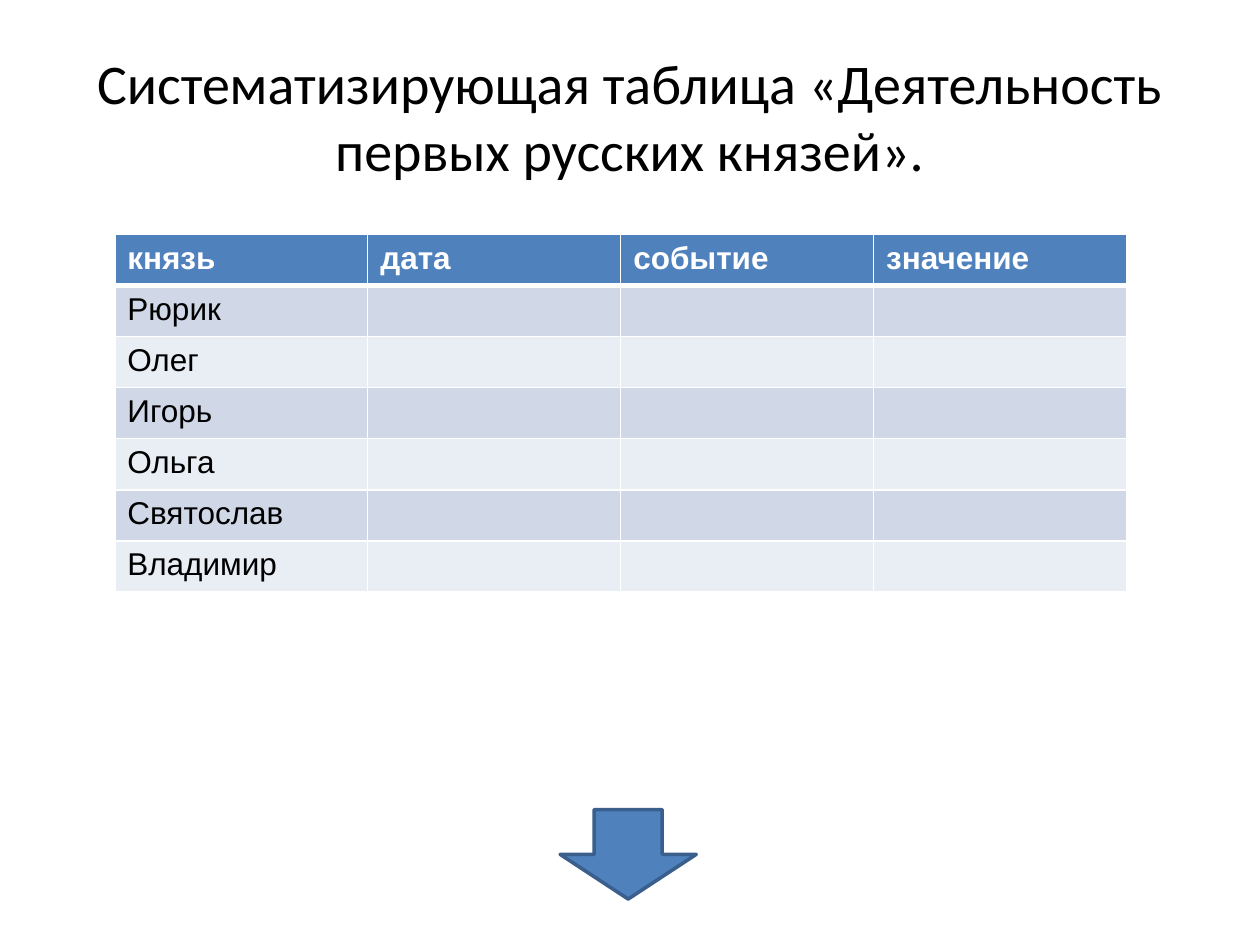
"""Build a slide with a table of the first Russian princes and a down arrow."""
from dataclasses import dataclass

from lxml.etree import SubElement
from pptx import Presentation
from pptx.dml.color import RGBColor as Color
from pptx.enum.shapes import MSO_SHAPE as Preset
from pptx.enum.text import MSO_ANCHOR as Anchor, PP_ALIGN as Align
from pptx.oxml.ns import qn
from pptx.util import Pt

TITLE = "Систематизирующая таблица «Деятельность первых русских князей»."
HEADINGS = ["князь", "дата", "событие", "значение"]
PRINCES = ["Рюрик", "Олег", "Игорь", "Ольга", "Святослав", "Владимир"]


@dataclass(frozen=True)
class Theme:
    title_font: str = "Calibri"
    table_font: str = "Arial"
    title_size: int = 32
    table_size: int = 18
    text: str = "000000"
    white: str = "FFFFFF"
    accent: str = "4F81BD"
    outline: str = "3A5F8C"
    bands: tuple = ("D0D8E8", "E9EDF4")


THEME = Theme()


def place(shape, left, top, width, height):
    shape.left, shape.top = Pt(left), Pt(top)
    shape.width, shape.height = Pt(width), Pt(height)


def add_text(para, text, font, size, color, bold=False):
    span = para.add_run()
    span.text = text
    span.font.name, span.font.size, span.font.bold = font, Pt(size), bold
    span.font.color.rgb = Color.from_string(color)


def set_borders(cell, top, bottom):
    properties = cell._tc.get_or_add_tcPr()
    for side, width in (("L", 1), ("R", 1), ("T", top), ("B", bottom)):
        line = SubElement(properties, qn(f"a:ln{side}"), w=str(Pt(width)))
        fill = SubElement(line, qn("a:solidFill"))
        SubElement(fill, qn("a:srgbClr"), val=THEME.white)


def add_title(page):
    title = page.shapes.title
    place(title, 36, 21.6, 648, 89.3)
    frame = title.text_frame
    frame.word_wrap = True
    frame.vertical_anchor = Anchor.MIDDLE
    para = frame.paragraphs[0]
    para.alignment = Align.CENTER
    add_text(para, TITLE, THEME.title_font, THEME.title_size, THEME.text)


def add_princes_table(page):
    rows = [HEADINGS] + [[name, "", "", ""] for name in PRINCES]
    row_height, column_width = 29.2, 144.54
    table = page.shapes.add_table(
        len(rows), len(HEADINGS), Pt(65.6), Pt(133.9),
        Pt(column_width * len(HEADINGS)), Pt(row_height * len(rows))).table
    for column in table.columns:
        column.width = Pt(column_width)
    for number, texts in enumerate(rows):
        table.rows[number].height = Pt(row_height)
        header = number == 0
        fill = THEME.accent if header else THEME.bands[(number - 1) % 2]
        color = THEME.white if header else THEME.text
        for cell, text in zip(table.rows[number].cells, texts):
            set_borders(cell, 3 if number == 1 else 1, 3 if header else 1)
            cell.fill.solid()
            cell.fill.fore_color.rgb = Color.from_string(fill)
            para = cell.text_frame.paragraphs[0]
            para.font.size = Pt(THEME.table_size)
            if text:
                add_text(para, text, THEME.table_font, THEME.table_size, color, header)


def add_arrow(page):
    arrow = page.shapes.add_shape(Preset.LEFT_ARROW, Pt(333.4), Pt(449.3), Pt(51.1), Pt(77.8))
    arrow.rotation = 270
    arrow.shadow.inherit = False
    arrow.fill.solid()
    arrow.fill.fore_color.rgb = Color.from_string(THEME.accent)
    arrow.line.color.rgb = Color.from_string(THEME.outline)
    arrow.line.width = Pt(2)


def main():
    deck = Presentation()
    deck.slide_width, deck.slide_height = Pt(720), Pt(540)
    page = deck.slides.add_slide(deck.slide_layouts.get_by_name("Title Only"))
    add_title(page)
    add_princes_table(page)
    add_arrow(page)
    deck.save("out.pptx")


if __name__ == "__main__":
    main()
